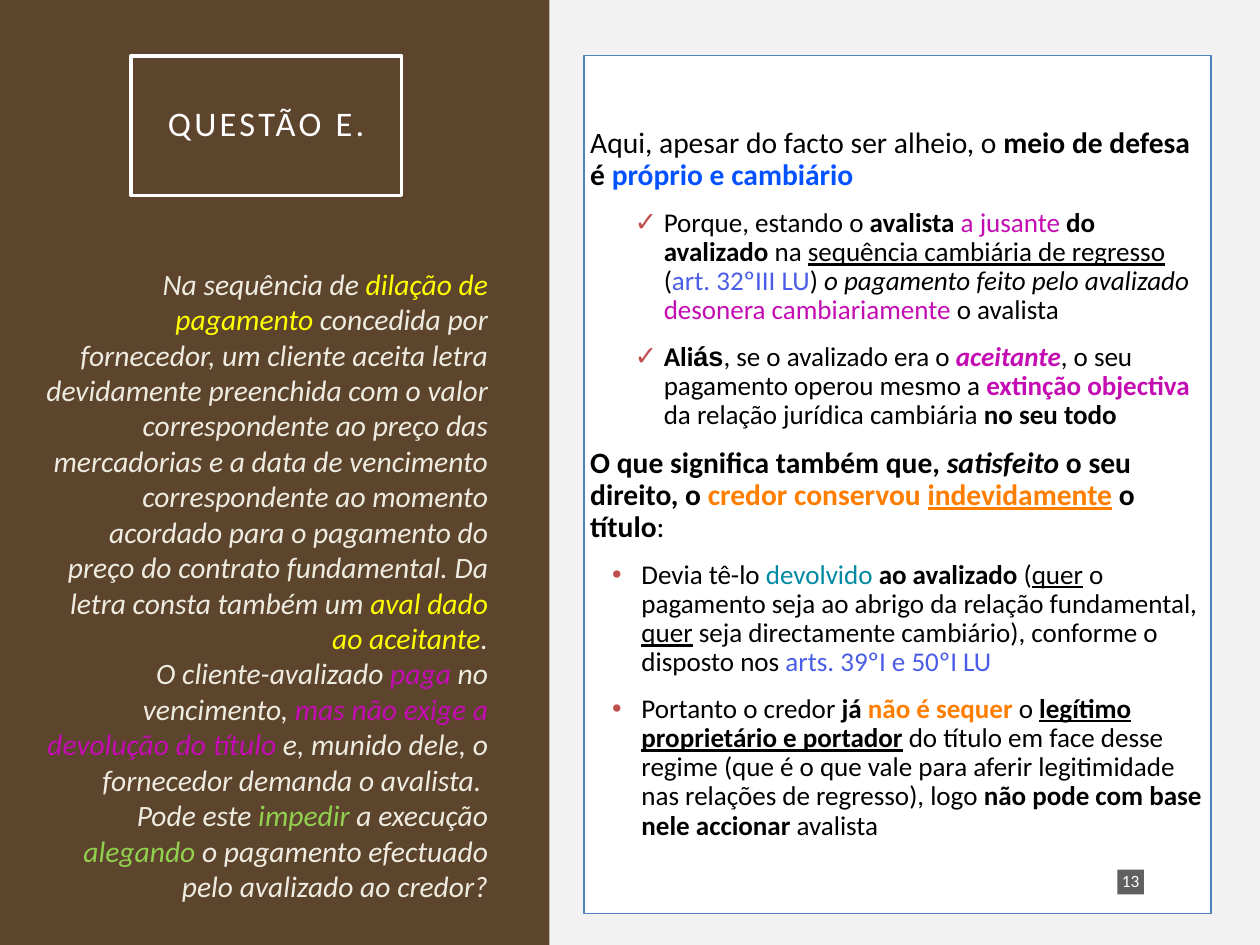
from lxml.etree import SubElement
from pptx import Presentation
from pptx.dml.color import RGBColor
from pptx.enum.shapes import MSO_SHAPE
from pptx.enum.text import MSO_ANCHOR, MSO_AUTO_SIZE, PP_ALIGN
from pptx.oxml.ns import qn
from pptx.util import Cm, Pt

BROWN = RGBColor(0x5D, 0x44, 0x2C)
WHITE = RGBColor(0xFF, 0xFF, 0xFF)
BLACK = RGBColor(0x00, 0x00, 0x00)
PALE = RGBColor(0xF2, 0xF2, 0xF2)
CREAM = RGBColor(0xEE, 0xEC, 0xE1)
CHARCOAL = RGBColor(0x1D, 0x1D, 0x1D)
FRAME_BLUE = RGBColor(0x4F, 0x81, 0xBD)
BRIGHT_BLUE = RGBColor(0x03, 0x51, 0xFF)
ARTICLE_BLUE = RGBColor(0x4A, 0x5D, 0xE6)
MAGENTA = RGBColor(0xC4, 0x0C, 0xB3)
ORANGE = RGBColor(0xFF, 0x7E, 0x00)
TEAL = RGBColor(0x00, 0x89, 0xA2)
YELLOW = RGBColor(0xFF, 0xFF, 0x00)
GREEN = RGBColor(0x92, 0xD0, 0x50)
BULLET_RED = RGBColor(0xC0, 0x50, 0x4D)

# Bullet sign and left indent in cm
PLAIN, CHECK, DOT = None, ("✓", 2.11), ("•", 1.47)

# Each run: text, style letters (b, i, u), colour, font
ANSWER = [
    (PLAIN, 24, [
        ("Aqui, apesar do facto ser alheio, o ",), ("meio de defesa é ", "b"),
        ("próprio e cambiário", "b", BRIGHT_BLUE)]),
    (CHECK, 22, [
        ("Porque, estando o ",), ("avalista ", "b"), ("a jusante ", "", MAGENTA),
        ("do avalizado", "b"), (" na ",),
        ("sequência cambiária de regresso ", "u"), ("(",),
        ("art. 32ºIII LU", "", ARTICLE_BLUE), (") ",),
        ("o pagamento feito pelo avalizado ", "i"),
        ("desonera cambiariamente", "", MAGENTA), (" o avalista",)]),
    (CHECK, 22, [
        ("Ali", "b"), ("ás", "b", BLACK, "Arial"), (", se o avalizado era o ",),
        ("aceitante", "bi", MAGENTA), (", o seu pagamento operou mesmo a ",),
        ("extinção objectiva ", "b", MAGENTA),
        ("da relação jurídica cambiária ",), ("no seu todo", "b")]),
    (PLAIN, 24, [
        ("O que significa também que, ", "b"), ("satisfeito", "bi"),
        (" o seu direito, o ", "b"), ("credor conservou ", "b", ORANGE),
        ("indevidamente", "bu", ORANGE), (" o título", "b"), (":",)]),
    (DOT, 22, [
        ("Devia tê-lo ",), ("devolvido ", "", TEAL), ("ao avalizado", "b"),
        (" (",), ("quer", "u"),
        (" o pagamento seja ao abrigo da relação fundamental, ",), ("quer", "u"),
        (" seja directamente cambiário), conforme o disposto nos ",),
        ("arts. 39ºI e 50ºI LU", "", ARTICLE_BLUE)]),
    (DOT, 22, [
        ("Portanto o credor ",), ("já ", "b"), ("não é sequer ", "b", ORANGE),
        ("o ",), ("legítimo proprietário e portador", "bu"),
        (" do título em face desse regime (que é o que vale para aferir "
         "legitimidade nas relações de regresso), logo ",),
        ("não pode com base nele accionar", "b"), (" avalista",)]),
]

CASE = [
    [("Na sequência de ",), ("dilação de pagamento ", "", YELLOW),
     ("concedida por fornecedor, um cliente aceita letra devidamente "
      "preenchida com o valor correspondente ao preço das mercadorias e a "
      "data de vencimento correspondente ao momento acordado para o pagamento "
      "do preço do contrato fundamental. Da letra consta também um ",),
     ("aval dado ao aceitante", "", YELLOW), (".",)],
    [("O cliente-avalizado ",), ("paga", "", MAGENTA), (" no vencimento, ",),
     ("mas não exige a devolução do título", "", MAGENTA),
     (" e, munido dele, o fornecedor demanda o avalista. ",)],
    [("Pode este ",), ("impedir", "", GREEN), (" a execução ",),
     ("alegando", "", GREEN),
     (" o pagamento efectuado pelo avalizado ao credor?",)],
]


class SlideBuilder:
    font = "Calibri"

    def __init__(self, deck):
        self.slide = deck.slides.add_slide(deck.slide_layouts[5])
        background = self.slide.background.fill
        background.solid()
        background.fore_color.rgb = BROWN

    def frame(self, shape, inset, anchor):
        frame = shape.text_frame
        frame.word_wrap = True
        frame.auto_size = MSO_AUTO_SIZE.NONE
        frame.vertical_anchor = anchor
        frame.margin_left = frame.margin_right = Cm(inset)
        frame.margin_top = frame.margin_bottom = Cm(inset)
        return frame

    def paragraph(self, frame, runs, size, ink, align=PP_ALIGN.LEFT,
                  spacing=0.9, before=0, bullet=PLAIN, italic=False):
        first = not frame.paragraphs[0].runs
        paragraph = frame.paragraphs[0] if first else frame.add_paragraph()
        paragraph.alignment = align
        paragraph.line_spacing = spacing
        paragraph.space_before = Pt(0 if first else before)
        if bullet:
            self.bullet(paragraph, *bullet)
        paragraph.font.name = self.font
        paragraph.font.size = Pt(size)
        paragraph.font.italic = italic
        for text, *look in runs:
            self.run(paragraph, text, ink, *look)
        return paragraph

    def run(self, paragraph, text, ink, style="", colour=None, font=None):
        run = paragraph.add_run()
        run.text = text
        run.font.color.rgb = colour or ink
        if "b" in style:
            run.font.bold = True
        if "i" in style:
            run.font.italic = True
        if "u" in style:
            run.font.underline = True
        if font:
            run.font.name = font

    def bullet(self, paragraph, sign, indent):
        properties = paragraph._p.get_or_add_pPr()
        properties.set("marL", str(Cm(indent)))
        properties.set("indent", str(-Cm(0.84)))
        colour = SubElement(properties, qn("a:buClr"))
        SubElement(colour, qn("a:srgbClr")).set("val", str(BULLET_RED))
        SubElement(properties, qn("a:buFont")).set("typeface", "Arial")
        SubElement(properties, qn("a:buChar")).set("char", sign)

    def title(self, text, left, top, width, height):
        title = self.slide.shapes.title
        title.left, title.top = Cm(left), Cm(top)
        title.width, title.height = Cm(width), Cm(height)
        title.line.color.rgb = WHITE
        title.line.width = Pt(3)
        frame = self.frame(title, 0.71, MSO_ANCHOR.MIDDLE)
        heading = self.paragraph(frame, [(text,)], 28, WHITE, PP_ALIGN.CENTER)
        heading.runs[0].font._element.set("spc", "270")

    def panel(self, left, top, width, height, fill, line=None, alpha=None):
        panel = self.slide.shapes.add_shape(
            MSO_SHAPE.RECTANGLE, Cm(left), Cm(top), Cm(width), Cm(height))
        panel.shadow.inherit = False
        panel.fill.solid()
        panel.fill.fore_color.rgb = fill
        if alpha:
            colour = panel._element.spPr.find(
                qn("a:solidFill")).find(qn("a:srgbClr"))
            SubElement(colour, qn("a:alpha")).set("val", str(alpha * 1000))
        if line:
            panel.line.color.rgb = line
            panel.line.width = Pt(1)
        else:
            panel.line.fill.background()
        return panel

    def text_box(self, left, top, width, height):
        return self.slide.shapes.add_textbox(
            Cm(left), Cm(top), Cm(width), Cm(height))


def main():
    deck = Presentation()
    deck.slide_width, deck.slide_height = Cm(36.12), Cm(27.1)
    builder = SlideBuilder(deck)

    # Question title
    builder.title("QUESTÃO E.", 3.76, 1.6, 7.75, 4.01)

    # Answer on the light half
    builder.panel(15.75, 0, 20.37, 27.1, PALE)
    answer = builder.panel(16.74, 1.6, 17.98, 24.59, WHITE, FRAME_BLUE)
    answer_text = builder.frame(answer, 0.18, MSO_ANCHOR.MIDDLE)
    for bullet, size, runs in ANSWER:
        builder.paragraph(answer_text, runs, size, BLACK, before=14, bullet=bullet)

    # Page number
    badge = builder.panel(32.03, 24.94, 0.76, 0.71, CHARCOAL, alpha=70)
    badge_text = builder.frame(badge, 0.08, MSO_ANCHOR.MIDDLE)
    builder.paragraph(badge_text, [("13",)], 14, WHITE, PP_ALIGN.CENTER)

    # Case on the brown half
    case = builder.text_box(1.09, 7.44, 13.08, 17.81)
    case_text = builder.frame(case, 0.18, MSO_ANCHOR.TOP)
    for runs in CASE:
        builder.paragraph(case_text, runs, 24, CREAM, PP_ALIGN.RIGHT,
                          spacing=1.0, italic=True)

    deck.save("out.pptx")


if __name__ == "__main__":
    main()
